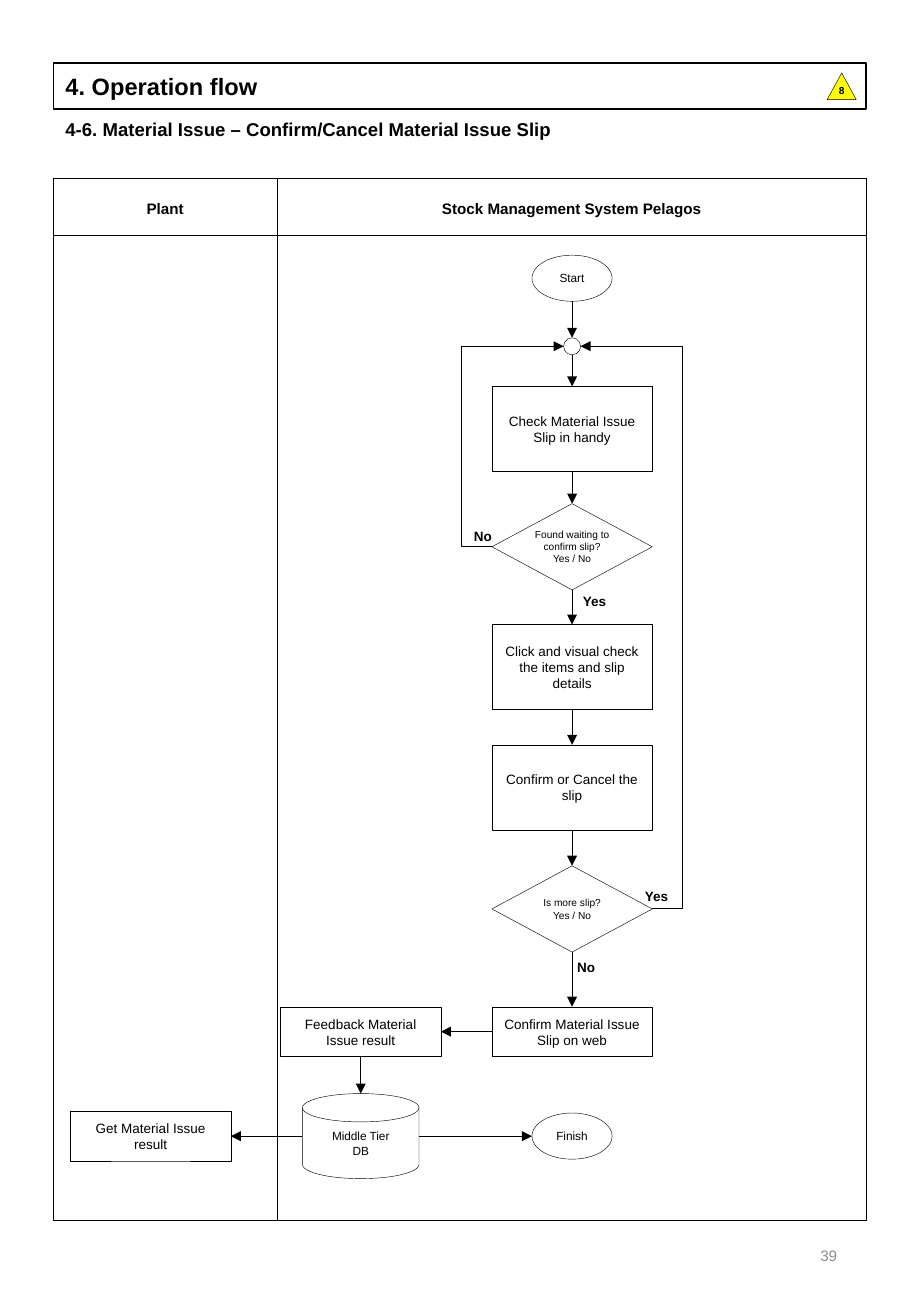
from pptx import Presentation
from pptx.dml.color import RGBColor
from pptx.enum.shapes import MSO_CONNECTOR as LINE, MSO_SHAPE as SHAPE
from pptx.enum.text import MSO_ANCHOR as ANCHOR, PP_ALIGN as ALIGN
from pptx.oxml.ns import qn
from pptx.oxml.xmlchemy import OxmlElement
from pptx.util import Inches, Pt

THEME = {
    "font": "Arial",
    "ink": RGBColor(0, 0, 0),
    "gray": RGBColor(0x8C, 0x8C, 0x8C),
    "yellow": RGBColor(0xFF, 0xFF, 0),
    "title": 14, "sub": 11, "head": 9, "step": 8, "small": 7, "tiny": 6,
    "bold line": 1, "flow line": 0.5, "thin line": 0.25,
}

# Content
TITLE = "4. Operation flow"
SUB = "4-6. Material Issue – Confirm/Cancel Material Issue Slip"
PAGE = "39"
MARK = "8"
LANES = ["Plant", "Stock Management System Pelagos"]

MID, SIDE = 4.71, 2.97  # centre lines of the two flow columns
LOW = 9.35              # centre of the bottom row

# kind: preset, width, height, text size
KINDS = {
    "step": (SHAPE.RECTANGLE, 1.32, 0.7, "step"),
    "slim": (SHAPE.RECTANGLE, 1.32, 0.41, "step"),
    "choice": (SHAPE.FLOWCHART_DECISION, 1.32, 0.71, "tiny"),
    "end": (SHAPE.OVAL, 0.66, 0.38, "small"),
    "join": (SHAPE.OVAL, 0.14, 0.14, "small"),
    "disk": (SHAPE.FLOWCHART_MAGNETIC_DISK, 0.96, 0.7, "small"),
}
# name: kind, centre x, centre y, text
NODES = {
    "start": ("end", MID, 2.29, "Start"),
    "join": ("join", MID, 2.85, ""),
    "check": ("step", MID, 3.53, "Check Material Issue Slip in handy"),
    "found": ("choice", MID, 4.5, "Found waiting to confirm slip?\nYes / No"),
    "click": ("step", MID, 5.49, "Click and visual check the items and slip details"),
    "confirm": ("step", MID, 6.48, "Confirm or Cancel the slip"),
    "more": ("choice", MID, 7.48, "Is more slip?\nYes / No"),
    "web": ("slim", MID, 8.49, "Confirm Material Issue Slip on web"),
    "feedback": ("slim", SIDE, 8.49, "Feedback Material Issue result"),
    "db": ("disk", SIDE, LOW, "Middle Tier\nDB"),
    "get": ("slim", 1.24, LOW, "Get Material Issue result"),
    "finish": ("end", MID, LOW, "Finish"),
}
TOP, LEFT, BOTTOM, RIGHT = range(4)
CHAIN = ["start", "join", "check", "found", "click", "confirm", "more", "web"]
LINKS = [(a, BOTTOM, b, TOP) for a, b in zip(CHAIN, CHAIN[1:])] + [
    ("web", LEFT, "feedback", RIGHT),
    ("feedback", BOTTOM, "db", TOP),
    ("db", LEFT, "get", RIGHT),
    ("db", RIGHT, "finish", LEFT),
]
LOOPS = [("found", LEFT), ("more", RIGHT)]
BULGE = 0.25  # how far a loop swings out past its choice
LABELS = [("No", 3.72, 4.3), ("Yes", 4.64, 4.83), ("Yes", 5.15, 7.26), ("No", 4.57, 7.84)]

deck = Presentation()
deck.slide_width, deck.slide_height = Inches(7.5), Inches(10.83)
slide = deck.slides.add_slide(deck.slide_layouts[6])
shapes = slide.shapes


def write(item, text, size, bold=False, color="ink", align=ALIGN.CENTER, anchor=ANCHOR.MIDDLE, **pads):
    frame = item.text_frame
    frame.text = text
    form = {"word_wrap": True, "vertical_anchor": anchor}
    form.update({f"margin_{side}": Inches(pad) for side, pad in pads.items()})
    for key, val in form.items():
        setattr(frame, key, val)
    for para in frame.paragraphs:
        para.alignment = align
        for key, val in {"name": THEME["font"], "size": Pt(THEME[size]), "bold": bold}.items():
            setattr(para.font, key, val)
        para.font.color.rgb = THEME[color]


def label(box, text, size, **form):
    write(shapes.add_textbox(*map(Inches, box)), text, size, **form)


def draw(preset, box, line="thin line", fill=None):
    item = shapes.add_shape(preset, *map(Inches, box))
    item.shadow.inherit = False
    if fill:
        item.fill.solid()
        item.fill.fore_color.rgb = THEME[fill]
    else:
        item.fill.background()
    item.line.color.rgb = THEME["ink"]
    item.line.width = Pt(THEME[line])
    return item


def join(kind, start, end, arrow=True):
    wire = shapes.add_connector(kind, *map(Inches, (*start, *end)))
    wire.line.color.rgb = THEME["ink"]
    wire.line.width = Pt(THEME["flow line"])
    props = wire._element.spPr
    if arrow:
        tip = OxmlElement("a:tailEnd")
        tip.set("type", "triangle")
        props.find(qn("a:ln")).append(tip)
    props.append(OxmlElement("a:effectLst"))
    return wire


def port(name, side):
    kind, x, y, _ = NODES[name]
    _, wide, high, _ = KINDS[kind]
    dx, dy = [(0, -1), (-1, 0), (0, 1), (1, 0)][side]
    return x + dx * wide / 2, y + dy * high / 2


# Page frame and lane heads
left, top, wide, high, band, split = 0.44, 1.47, 6.69, 8.57, 0.47, 2.28
write(draw(SHAPE.RECTANGLE, (left, 0.52, wide, 0.38), "bold line"),
      TITLE, "title", bold=True, align=ALIGN.LEFT)
label((left, 0.92, wide, 0.29), SUB, "sub", bold=True, align=ALIGN.LEFT, anchor=ANCHOR.TOP)
write(draw(SHAPE.ISOSCELES_TRIANGLE, (6.81, 0.6, 0.24, 0.22), fill="yellow"),
      MARK, "tiny", bold=True, top=0, bottom=0.05)
for tall in (high, band):
    draw(SHAPE.RECTANGLE, (left, top, wide, tall))
join(LINE.STRAIGHT, (split, top), (split, top + high), arrow=False)
edges = [left, split, left + wide]
for text, a, b in zip(LANES, edges, edges[1:]):
    label((a, top + 0.01, b - a, band), text, "head", bold=True)
label((5.3, 10.04, 1.69, 0.58), PAGE, "head", color="gray", align=ALIGN.RIGHT)

# Flow nodes
made = {}
for name, (kind, x, y, text) in NODES.items():
    preset, w, h, size = KINDS[kind]
    made[name] = draw(preset, (x - w / 2, y - h / 2, w, h))
    if text:
        pads = {"left": 0, "right": 0} if kind == "choice" else {}
        write(made[name], text, size, **pads)

# Straight arrows, joined where the shape has four side points
for a, out, b, into in LINKS:
    wire = join(LINE.STRAIGHT, port(a, out), port(b, into))
    for name, side, glue in ((a, out, wire.begin_connect), (b, into, wire.end_connect)):
        if NODES[name][0] in ("step", "slim", "choice"):
            glue(made[name], side)

# Loops back to the join
for name, side in LOOPS:
    start, end = port(name, side), port("join", side)
    wire = join(LINE.ELBOW, start, end)
    bend = OxmlElement("a:gd")
    bend.set("name", "adj1")
    bend.set("fmla", f"val {round(-BULGE / abs(end[0] - start[0]) * 100000)}")
    wire._element.spPr.find(qn("a:prstGeom")).get_or_add_avLst().append(bend)

# Branch labels
for text, x, y in LABELS:
    label((x, y, 0.51, 0.23), text, "step", bold=True)

deck.save("out.pptx")
